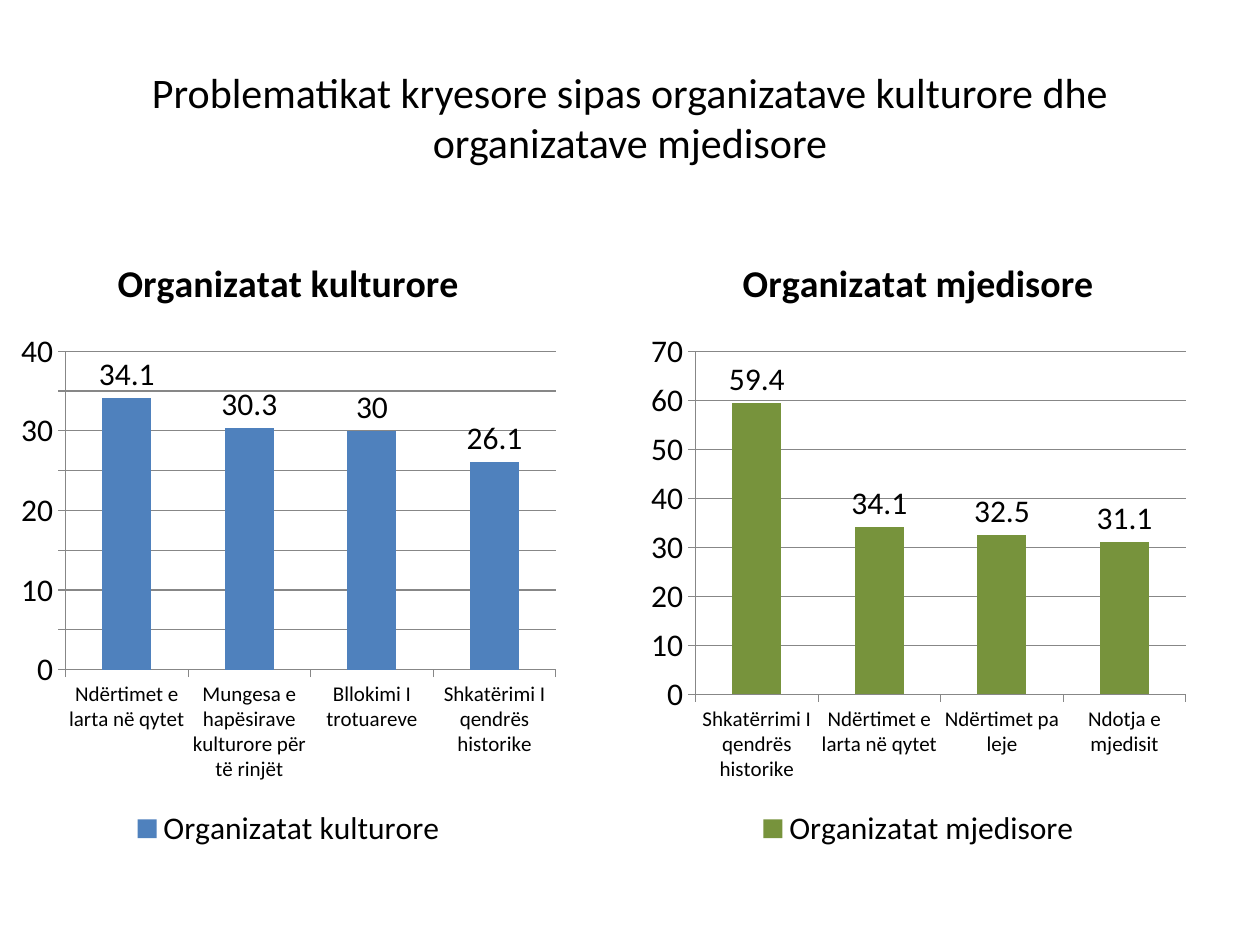
from pptx import Presentation
from pptx.chart.data import CategoryChartData
from pptx.dml.color import RGBColor
from pptx.enum.chart import XL_CHART_TYPE as ChartType
from pptx.enum.chart import XL_LABEL_POSITION as LabelPosition
from pptx.enum.chart import XL_LEGEND_POSITION as LegendPosition
from pptx.enum.chart import XL_TICK_MARK as TickMark
from pptx.enum.text import MSO_ANCHOR, PP_ALIGN
from pptx.util import Inches, Pt

BLACK = RGBColor(0x00, 0x00, 0x00)
GRAY = RGBColor(0x87, 0x87, 0x87)
BLUE = RGBColor(0x4F, 0x81, 0xBD)
GREEN = RGBColor(0x77, 0x93, 0x3C)
FONT = "Calibri"

# Content
TITLE = ("Problematikat kryesore sipas organizatave kulturore dhe "
         "organizatave mjedisore")
CHARTS = [
    {"name": "Organizatat kulturore", "color": BLUE, "top": 40, "step": 5,
     "bars": [("Ndërtimet e larta në qytet", 34.1),
              ("Mungesa e hapësirave kulturore për të rinjët", 30.3),
              ("Bllokimi I trotuareve", 30),
              ("Shkatërimi I qendrës historike", 26.1)]},
    {"name": "Organizatat mjedisore", "color": GREEN, "top": 70, "step": 10,
     "bars": [("Shkatërrimi I qendrës historike", 59.4),
              ("Ndërtimet e larta në qytet", 34.1),
              ("Ndërtimet pa leje", 32.5),
              ("Ndotja e mjedisit", 31.1)]},
]
CHART_LEFT, CHART_TOP, CHART_WIDTH, CHART_HEIGHT = 0.08, 1.83, 4.42, 4.95
CHART_PITCH = 5


def style_font(font, size, bold=False):
    settings = {"name": FONT, "size": Pt(size), "bold": bold}
    for key, value in settings.items():
        setattr(font, key, value)
    font.color.rgb = BLACK


def style_line(line):
    line.color.rgb = GRAY
    line.width = Pt(0.75)


def add_title(page):
    box = page.shapes.add_textbox(Inches(0.5), Inches(0.3), Inches(9), Inches(1.25))
    frame = box.text_frame
    frame.word_wrap = True
    frame.vertical_anchor = MSO_ANCHOR.MIDDLE
    para = frame.paragraphs[0]
    para.alignment = PP_ALIGN.CENTER
    span = para.add_run()
    span.text = TITLE
    style_font(span.font, 24)


def add_bar_chart(page, left, content):
    data = CategoryChartData()
    data.categories = [label for label, _ in content["bars"]]
    data.add_series(content["name"], [value for _, value in content["bars"]])
    chart = page.shapes.add_chart(
        ChartType.COLUMN_CLUSTERED, Inches(left), Inches(CHART_TOP),
        Inches(CHART_WIDTH), Inches(CHART_HEIGHT), data).chart
    style_font(chart.font, 18)

    # Title and legend
    chart.has_title = True
    span = chart.chart_title.text_frame.paragraphs[0].add_run()
    span.text = content["name"]
    style_font(span.font, 21.6, bold=True)
    chart.chart_title.include_in_layout = False
    chart.has_legend = True
    chart.legend.position = LegendPosition.BOTTOM
    chart.legend.include_in_layout = False
    style_font(chart.legend.font, 18)

    # Axes
    for axis, size in ((chart.category_axis, 12), (chart.value_axis, 18)):
        axis.major_tick_mark = TickMark.OUTSIDE
        axis.minor_tick_mark = TickMark.NONE
        style_font(axis.tick_labels.font, size)
        style_line(axis.format.line)
    scale = {"minimum_scale": 0, "maximum_scale": content["top"],
             "major_unit": content["step"], "has_major_gridlines": True}
    for key, value in scale.items():
        setattr(chart.value_axis, key, value)
    style_line(chart.value_axis.major_gridlines.format.line)

    # Bars and their values
    plot = chart.plots[0]
    plot.vary_by_categories = False
    plot.gap_width = 150
    fill = plot.series[0].format.fill
    fill.solid()
    fill.fore_color.rgb = content["color"]
    plot.has_data_labels = True
    labels = plot.data_labels
    labels.show_value = True
    labels.position = LabelPosition.OUTSIDE_END
    style_font(labels.font, 18)


def main():
    deck = Presentation()
    deck.slide_width, deck.slide_height = Inches(10), Inches(7.5)
    page = deck.slides.add_slide(deck.slide_layouts[6])
    add_title(page)
    for index, content in enumerate(CHARTS):
        add_bar_chart(page, CHART_LEFT + index * CHART_PITCH, content)
    deck.save("out.pptx")


if __name__ == "__main__":
    main()
